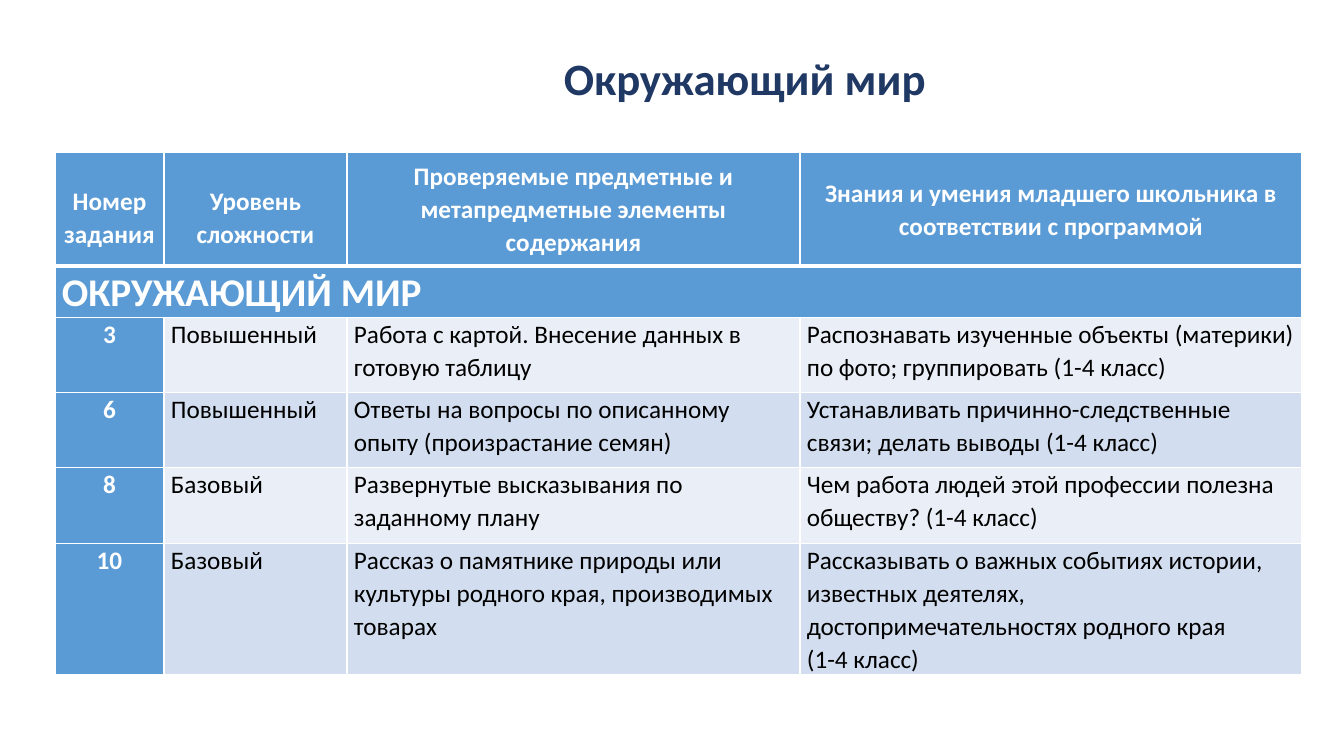
from lxml import etree
from pptx import Presentation, util as u
from pptx.dml.color import RGBColor
from pptx.enum import text
from pptx.oxml import ns

PX = 9071.43  # EMU per px
WHITE = RGBColor(0xFF, 0xFF, 0xFF)
BLACK = RGBColor(0, 0, 0)
NAVY = RGBColor(0x20, 0x38, 0x64)
BLUE = RGBColor(0x5B, 0x9B, 0xD5)
BANDS = [RGBColor(0xEA, 0xEF, 0xF7), RGBColor(0xD2, 0xDE, 0xEF)]
CENTER = text.PP_ALIGN.CENTER
LEFT = text.PP_ALIGN.LEFT


def px(length):
    return u.Emu(round(length * PX))


def write(frame, content, align, spacing, **font_format):
    for index, line in enumerate(content.split("\n")):
        paragraph = frame.add_paragraph() if index else frame.paragraphs[0]
        paragraph.alignment = align
        paragraph.line_spacing = spacing
        run = paragraph.add_run()
        run.text = line
        run.font.name = "Calibri"
        run.font.color.rgb = font_format["color"]
        for name in ("size", "bold"):
            setattr(run.font, name, font_format[name])


presentation = Presentation()
presentation.slide_width = px(1344)
presentation.slide_height = px(756)
slide = presentation.slides.add_slide(presentation.slide_layouts[6])

# Table content
ROWS = [
    ["Номер задания", "Уровень\nсложности",
     "Проверяемые предметные и метапредметные элементы содержания",
     "Знания и умения младшего школьника в соответствии с программой"],
    ["ОКРУЖАЮЩИЙ МИР", "", "", ""],
    ["3", "Повышенный", "Работа с картой. Внесение данных в готовую таблицу",
     "Распознавать изученные объекты (материки) по фото; группировать (1-4 класс)"],
    ["6", "Повышенный", "Ответы на вопросы по описанному опыту (произрастание семян)",
     "Устанавливать причинно-следственные связи; делать выводы (1-4 класс)"],
    ["8", "Базовый", "Развернутые высказывания по заданному плану",
     "Чем работа людей этой профессии полезна обществу? (1-4 класс)"],
    ["10", "Базовый",
     "Рассказ о памятнике природы или культуры родного края, производимых товарах",
     "Рассказывать о важных событиях истории, известных деятелях, "
     "достопримечательностях родного края\n(1-4 класс)"],
]
COLUMN_WIDTHS = [109, 183, 453, 502]
ROW_HEIGHTS = [114, 50, 75, 75, 76, 129]

# Table grid
table = slide.shapes.add_table(
    len(ROWS), len(COLUMN_WIDTHS), px(55), px(152),
    px(sum(COLUMN_WIDTHS)), px(sum(ROW_HEIGHTS))).table
for column, width in zip(table.columns, COLUMN_WIDTHS):
    column.width = px(width)
for row, height in zip(table.rows, ROW_HEIGHTS):
    row.height = px(height)
table.cell(1, 0).merge(table.cell(1, 3))

# Table cells
for r, values in enumerate(ROWS):
    for c, value in enumerate(values):
        cell = table.cell(r, c)
        header = r == 0
        strong = r < 2 or c == 0
        low_header = header and c < 2
        cell.margin_left = cell.margin_right = px(7)
        cell.margin_top = px(32 if low_header else 0)
        cell.margin_bottom = 0
        if header and not low_header:
            cell.vertical_anchor = text.MSO_ANCHOR.MIDDLE
        cell.fill.solid()
        cell.fill.fore_color.rgb = BLUE if strong else BANDS[r % 2]

        # White borders, thick between the header and the section row
        properties = cell._tc.get_or_add_tcPr()
        for index, side in enumerate(["lnL", "lnR", "lnT", "lnB"]):
            thick = (r, side) in [(0, "lnB"), (1, "lnT")]
            line = etree.Element(ns.qn("a:" + side), w=str(u.Pt(3 if thick else 1)))
            fill = etree.SubElement(line, ns.qn("a:solidFill"))
            etree.SubElement(fill, ns.qn("a:srgbClr"), val=str(WHITE))
            properties.insert(index, line)

        if value:
            centered = header or (c == 0 and r > 1)
            write(cell.text_frame, value, CENTER if centered else LEFT, 1.07,
                  size=u.Pt(28 if r == 1 else 18), bold=strong,
                  color=WHITE if strong else BLACK)

# Title
title = slide.shapes.add_textbox(px(311), px(46), px(868), px(65))
title.text_frame.word_wrap = True
write(title.text_frame, "Окружающий мир", CENTER, 1.0,
      size=u.Pt(32), bold=True, color=NAVY)

presentation.save("out.pptx")
